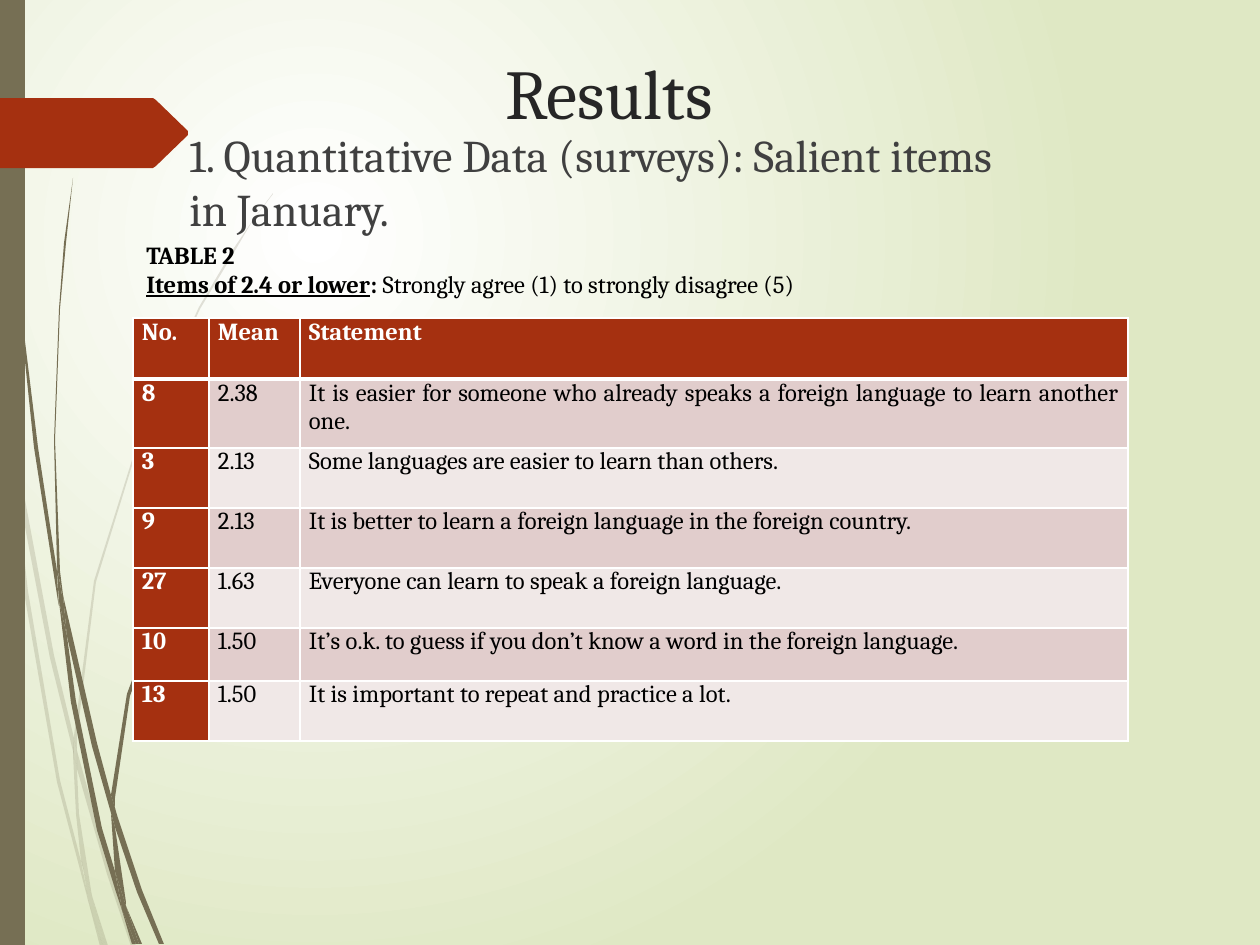
from lxml import etree
from pptx import Presentation, util as u
from pptx.dml.color import RGBColor
from pptx.enum import shapes as kinds, text
from pptx.oxml.ns import qn

PX = 914400 / 126
FONT = "Cambria"
COLORS = {
    "paper": "FFFFFF", "sage": "DFE8C4", "olive": "766F54", "rust": "A53010",
    "title": "262626", "body": "404040", "ink": "000000",
    "odd": "E1CDCC", "even": "F0E8E7",
}

# Outline of each blade of grass, in px
PALE_BLADES = [
    [(10, 441), (8, 406), (0, 355), (0, 377), (9, 433)],
    [(13, 435), (15, 474), (50, 658), (74, 755), (74, 738), (54, 655)],
    [(77, 769), (107, 874), (131, 946), (136, 946), (111, 872), (81, 765), (77, 751)],
    [(92, 896), (105, 946), (108, 946)],
    [(10, 441), (24, 592), (57, 782), (81, 873), (88, 900),
     (87, 891), (81, 861), (60, 780), (28, 591), (15, 474)],
    [(73, 755), (76, 814), (81, 861), (84, 872), (92, 896),
     (91, 890), (79, 814), (77, 769), (77, 766)],
    [(77, 751), (77, 736), (96, 582), (140, 440), (200, 309), (236, 249), (253, 220), (273, 194),
     (273, 193), (253, 220), (234, 248), (199, 307), (139, 438), (94, 581), (74, 736), (74, 738)],
    [(88, 900), (100, 946), (103, 946)],
    [(77, 766), (77, 769), (77, 751), (74, 738), (73, 755)],
    [(84, 872), (82, 861), (87, 891), (88, 900), (103, 946), (105, 946), (92, 896)],
]
DARK_BLADES = [
    [(3, 0), (4, 60), (6, 139), (18, 294), (34, 447), (58, 601), (59, 606),
     (57, 576), (57, 571), (38, 447), (19, 292), (8, 137), (5, 60), (4, 0)],
    [(63, 595), (67, 636), (92, 746), (111, 813), (111, 798), (111, 795), (97, 743)],
    [(115, 808), (115, 827), (137, 892), (159, 944), (164, 944), (142, 890), (118, 818)],
    [(59, 601), (71, 702), (97, 830), (116, 892), (122, 910),
     (121, 903), (115, 871), (102, 828), (76, 701), (67, 636)],
    [(63, 595), (60, 571), (55, 440), (60, 309), (66, 243), (73, 178),
     (64, 243), (59, 309), (54, 440), (57, 566), (62, 595)],
    [(126, 906), (139, 944), (142, 944)],
    [(59, 601), (67, 636), (63, 595), (62, 595), (57, 566), (57, 571)],
    [(115, 808), (115, 798), (130, 696), (165, 600), (213, 512), (241, 471), (256, 452), (272, 433),
     (271, 433), (256, 451), (241, 470), (212, 510), (163, 597), (127, 694), (111, 795)],
    [(122, 910), (132, 944), (136, 944)],
    [(111, 813), (115, 871), (121, 890), (126, 906), (126, 902), (115, 827), (113, 820)],
    [(111, 813), (113, 820), (115, 827), (115, 808), (111, 795), (111, 798)],
    [(121, 890), (115, 871), (121, 903), (122, 910), (136, 944), (139, 944), (126, 906)],
]
TAG = [(0, 98), (153, 98), (156, 100), (188, 131), (188, 135), (156, 166), (153, 168), (0, 168)]

COLUMNS = [76, 91, 828]
ROW_HEIGHTS = [61, 69, 60, 60, 60, 53, 60]
ITEMS = [
    ("No.", "Mean", "Statement"),
    ("8", "2.38", "It is easier for someone who already speaks a foreign language to learn another one."),
    ("3", "2.13", "Some languages are easier to learn than others."),
    ("9", "2.13", "It is better to learn a foreign language in the foreign country."),
    ("27", "1.63", "Everyone can learn to speak a foreign language."),
    ("10", "1.50", "It’s o.k. to guess if you don’t know a word in the foreign language."),
    ("13", "1.50", "It is important to repeat and practice a lot."),
]


def px(length):
    return u.Emu(round(length * PX))


def rgb(key):
    return RGBColor.from_string(COLORS[key])


def paint(shape, key, opacity=100):
    shape.shadow.inherit = False
    shape.fill.solid()
    shape.fill.fore_color.rgb = rgb(key)
    shape.line.fill.background()
    if opacity < 100:
        hue = shape._element.spPr.find(".//" + qn("a:srgbClr"))
        etree.SubElement(hue, qn("a:alpha"), val=str(opacity * 1000))


def write(paragraph, words, size, color, **formats):
    run = paragraph.add_run()
    run.text = words
    run.font.color.rgb = rgb(color)
    for key, value in {"name": FONT, "size": u.Pt(size), **formats}.items():
        setattr(run.font, key, value)


def add_outline(shapes, points, color, opacity=100):
    start, *rest = points
    builder = shapes.build_freeform(*start, scale=PX)
    builder.add_line_segments(rest, close=True)
    paint(builder.convert_to_shape(), color, opacity)


def add_backdrop(slide):
    # Radial background
    fill = slide.background.fill
    fill.gradient()
    for stop, position, key in zip(fill.gradient_stops, (0, 1), ("paper", "sage")):
        stop.position = position
        stop.color.rgb = rgb(key)
    linear = slide._element.find(".//" + qn("a:lin"))
    radial = etree.Element(qn("a:path"), path="circle")
    etree.SubElement(radial, qn("a:fillToRect"), l="50000", t="50000", r="100000", b="100000")
    linear.getparent().replace(linear, radial)

    # Grass, side bar and tag
    for blades, opacity in ((PALE_BLADES, 20), (DARK_BLADES, 100)):
        clump = slide.shapes.add_group_shape()
        for blade in blades:
            add_outline(clump.shapes, blade, "olive", opacity)
    side_bar = slide.shapes.add_shape(kinds.MSO_SHAPE.RECTANGLE, 0, 0, px(25), px(945))
    paint(side_bar, "olive")
    add_outline(slide.shapes, TAG, "rust")


def add_text_area(slide, box, anchor=text.MSO_ANCHOR.TOP):
    frame = slide.shapes.add_textbox(*map(px, box)).text_frame
    frame.word_wrap = True
    frame.vertical_anchor = anchor
    return frame


def add_headings(slide, title_box, subtitle_box):
    title = add_text_area(slide, title_box).paragraphs[0]
    title.alignment = text.PP_ALIGN.CENTER
    write(title, "Results", 40, "title")
    subtitle = add_text_area(slide, subtitle_box).paragraphs[0]
    subtitle.space_before = u.Pt(10)
    write(subtitle, "1. Quantitative Data (surveys): Salient items in January.", 25.9, "body")


def add_caption(slide, box):
    frame = add_text_area(slide, box, text.MSO_ANCHOR.MIDDLE)
    write(frame.paragraphs[0], "TABLE 2", 14, "ink", bold=True)
    scale_note = frame.add_paragraph()
    write(scale_note, "Items of 2.4 or lower", 14, "ink", bold=True, underline=True)
    write(scale_note, ": ", 14, "ink", bold=True)
    write(scale_note, "Strongly agree (1) to strongly disagree (5)", 14, "ink")


def add_borders(cell, widths):
    properties = cell._tc.get_or_add_tcPr()
    for index, (side, points) in enumerate(widths.items()):
        line = etree.Element(qn("a:ln" + side), w=str(u.Pt(points)))
        solid = etree.SubElement(line, qn("a:solidFill"))
        etree.SubElement(solid, qn("a:srgbClr"), val=COLORS["paper"])
        properties.insert(index, line)


def add_items_table(slide, left, top):
    frame = slide.shapes.add_table(len(ITEMS), len(COLUMNS), px(left), px(top),
                                   px(sum(COLUMNS)), px(sum(ROW_HEIGHTS)))
    table = frame.table
    for column, width in zip(table.columns, COLUMNS):
        column.width = px(width)
    for r, (row, height, item) in enumerate(zip(table.rows, ROW_HEIGHTS, ITEMS)):
        row.height = px(height)
        for c, (cell, words) in enumerate(zip(row.cells, item)):
            heading = r == 0 or c == 0
            margins = {"margin_left": 9, "margin_right": 9, "margin_top": 0, "margin_bottom": 0}
            for key, value in margins.items():
                setattr(cell, key, px(value))
            cell.fill.solid()
            cell.fill.fore_color.rgb = rgb("rust" if heading else "odd" if r % 2 else "even")
            add_borders(cell, {"L": 1, "R": 1, "T": 3 if r == 1 else 1, "B": 3 if r == 0 else 1})
            paragraph = cell.text_frame.paragraphs[0]
            paragraph.alignment = text.PP_ALIGN.JUSTIFY
            write(paragraph, words, 14, "paper" if heading else "ink", bold=heading)


def main():
    deck = Presentation()
    deck.slide_width, deck.slide_height = px(1260), px(945)
    slide = deck.slides.add_slide(deck.slide_layouts[6])
    add_backdrop(slide)
    add_headings(slide, (155, 43, 908, 176), (177, 121, 867, 117))
    add_items_table(slide, 133, 318)
    add_caption(slide, (134, 233, 971, 72))
    deck.save("out.pptx")


if __name__ == "__main__":
    main()
